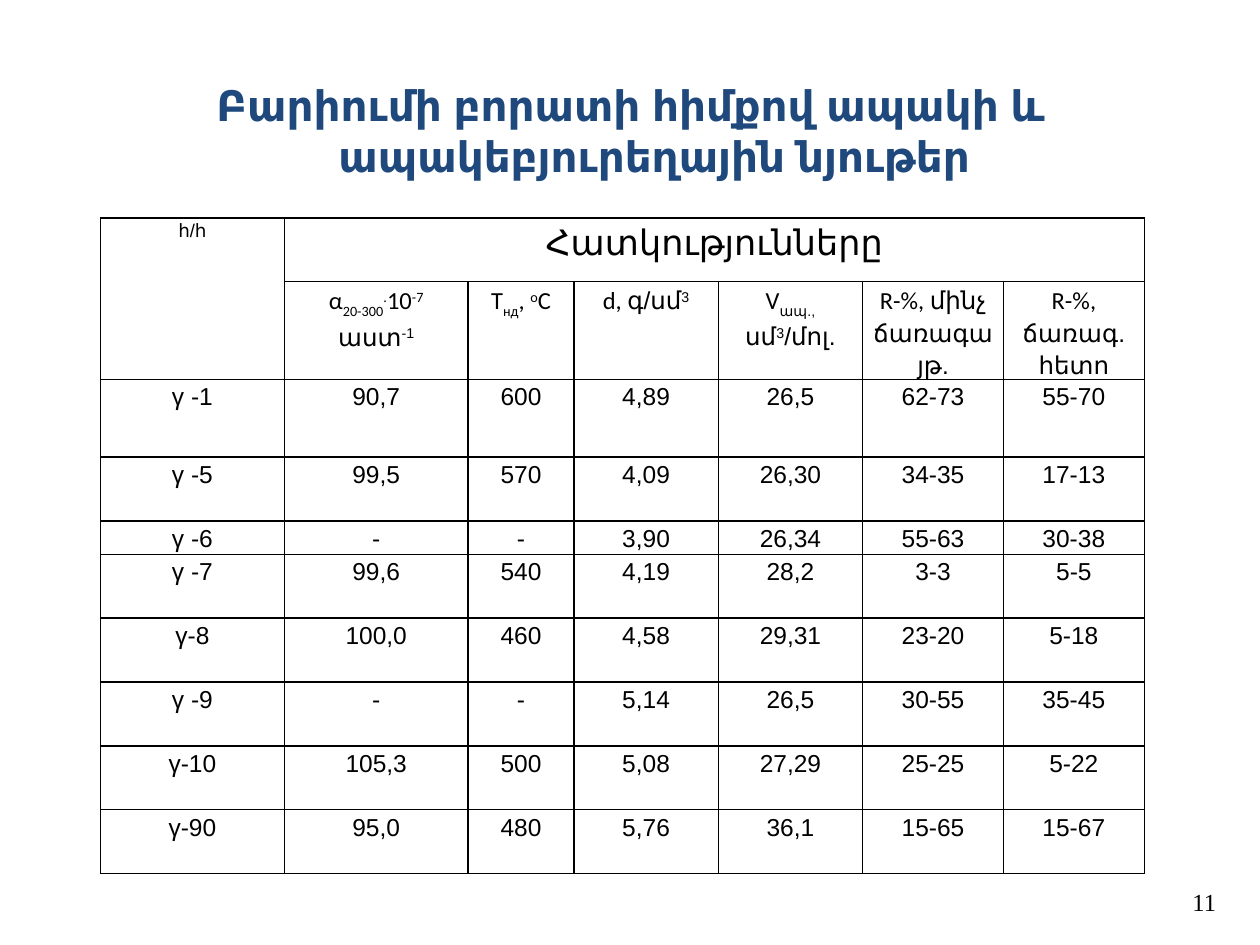
import pptx
import pptx.dml.color
import pptx.enum.shapes
import pptx.enum.text
import pptx.oxml
import pptx.oxml.ns
import pptx.util

Pt = pptx.util.Pt
ALIGN = pptx.enum.text.PP_ALIGN
ANCHOR = pptx.enum.text.MSO_ANCHOR
BLACK = pptx.dml.color.RGBColor(0x00, 0x00, 0x00)
WHITE = pptx.dml.color.RGBColor(0xFF, 0xFF, 0xFF)
NAVY = pptx.dml.color.RGBColor(0x1F, 0x49, 0x7D)

# Content: a text is a string or a list of (text, font, baseline percent)
TITLE = "Բարիումի բորատի հիմքով ապակի և ապակեբյուրեղային նյութեր"
SAMPLE_HEADING = "հ/հ"
PROPERTIES_HEADING = "Հատկությունները"
PAGE_NUMBER = "11"
PROPERTIES = [
    [("α", "Calibri", 0), ("20-300", "Calibri", -25), (".", "Calibri", 30),
     ("10", "Calibri", 0), ("-7 ", "Calibri", 30), ("աստ", "Arial", 0), ("-1", "Arial", 30)],
    [("T", "Calibri", 0), ("нд", "Calibri", -25), (", ", "Calibri", 0),
     ("o", "Calibri", 30), ("C", "Calibri", 0)],
    [("d, ", "Calibri", 0), ("գ/սմ", "Arial", 0), ("3", "Arial", 30)],
    [("V", "Calibri", 0), ("ապ., ", "Arial", -25), ("սմ", "Arial", 0),
     ("3", "Arial", 30), ("/մոլ.", "Arial", 0)],
    [("R-%, ", "Calibri", 0), ("մինչ ճառագայթ.", "Arial", 0)],
    [("R-%, ", "Calibri", 0), ("ճառագ. հետո", "Arial", 0)],
]
SAMPLES = [
    ("γ -1", "90,7", "600", "4,89", "26,5", "62-73", "55-70"),
    ("γ -5", "99,5", "570", "4,09", "26,30", "34-35", "17-13"),
    ("γ -6", "-", "-", "3,90", "26,34", "55-63", "30-38"),
    ("γ -7", "99,6", "540", "4,19", "28,2", "3-3", "5-5"),
    ("γ-8", "100,0", "460", "4,58", "29,31", "23-20", "5-18"),
    ("γ -9", "-", "-", "5,14", "26,5", "30-55", "35-45"),
    ("γ-10", "105,3", "500", "5,08", "27,29", "25-25", "5-22"),
    ("γ-90", "95,0", "480", "5,76", "36,1", "15-65", "15-67"),
]
COLUMN_WIDTHS = [105, 105, 60.5, 82.5, 82.5, 80.5, 80.5]
ROW_HEIGHTS = [36.5, 55.5, 44.5, 36.5, 19] + [36.5] * 5


def write_text(frame, text, size=14, font="Arial", color=BLACK, bold=False,
               align=ALIGN.CENTER, line_spacing=None, space_after=None, hanging=0):
    paragraph = frame.paragraphs[0]
    paragraph.alignment = align
    paragraph.line_spacing = line_spacing
    paragraph.space_after = space_after
    if hanging:
        properties = paragraph._p.get_or_add_pPr()
        properties.set("marL", str(Pt(hanging)))
        properties.set("indent", str(-Pt(hanging)))
    pieces = [(text, font, 0)] if isinstance(text, str) else text
    for words, typeface, baseline in pieces:
        run = paragraph.add_run()
        run.text = words
        run.font.name = typeface
        run.font.size = Pt(size)
        run.font.bold = bold
        run.font.color.rgb = color
        if baseline:
            run._r.get_or_add_rPr().set("baseline", str(baseline * 1000))


def draw_borders(cell):
    for side in ("lnL", "lnR", "lnT", "lnB"):
        cell._tc.get_or_add_tcPr().append(pptx.oxml.parse_xml(
            f'<a:{side} {pptx.oxml.ns.nsdecls("a")} w="{Pt(1)}"><a:solidFill>'
            f'<a:srgbClr val="{BLACK}"/></a:solidFill></a:{side}>'))


def main():
    deck = pptx.Presentation()
    deck.slide_width, deck.slide_height = Pt(720), Pt(540)
    slide = deck.slides.add_slide(deck.slide_layouts[6])

    # Title
    title = slide.shapes.add_shape(pptx.enum.shapes.MSO_SHAPE.RECTANGLE,
                                   Pt(57.5), Pt(42), Pt(606), Pt(65.5))
    title.shadow.inherit = False
    title.fill.solid()
    title.fill.fore_color.rgb = WHITE
    title.line.fill.background()
    title.text_frame.word_wrap = True
    title.text_frame.vertical_anchor = ANCHOR.TOP
    write_text(title.text_frame, TITLE, size=24, color=NAVY, bold=True, hanging=27)

    # Table grid
    table = slide.shapes.add_table(len(ROW_HEIGHTS), len(COLUMN_WIDTHS), Pt(57.5), Pt(124.5),
                                   Pt(sum(COLUMN_WIDTHS)), Pt(sum(ROW_HEIGHTS))).table
    table.first_row = table.horz_banding = False
    for column, width in zip(table.columns, COLUMN_WIDTHS):
        column.width = Pt(width)
    for row, height in zip(table.rows, ROW_HEIGHTS):
        row.height = Pt(height)
    for cell in table.iter_cells():
        cell.margin_left = cell.margin_right = Pt(5)
        cell.margin_top = cell.margin_bottom = 0
        draw_borders(cell)
        cell.fill.background()
    table.cell(0, 0).merge(table.cell(1, 0))
    table.cell(0, 1).merge(table.cell(0, len(COLUMN_WIDTHS) - 1))

    # Table text
    entries = [(0, 0, SAMPLE_HEADING, 10.5), (0, 1, PROPERTIES_HEADING, 20)]
    entries += [(1, col, name, 14) for col, name in enumerate(PROPERTIES, 1)]
    entries += [(row, col, value, 14) for row, sample in enumerate(SAMPLES, 2)
                for col, value in enumerate(sample)]
    for row, col, text, size in entries:
        write_text(table.cell(row, col).text_frame, text, size=size,
                   line_spacing=1.15, space_after=Pt(8))

    # Page number
    page = slide.shapes.add_textbox(Pt(654), Pt(500.5), Pt(48), Pt(29))
    page.text_frame.word_wrap = True
    page.text_frame.vertical_anchor = ANCHOR.MIDDLE
    write_text(page.text_frame, PAGE_NUMBER, font="Times New Roman", align=ALIGN.RIGHT)

    deck.save("out.pptx")


if __name__ == "__main__":
    main()
